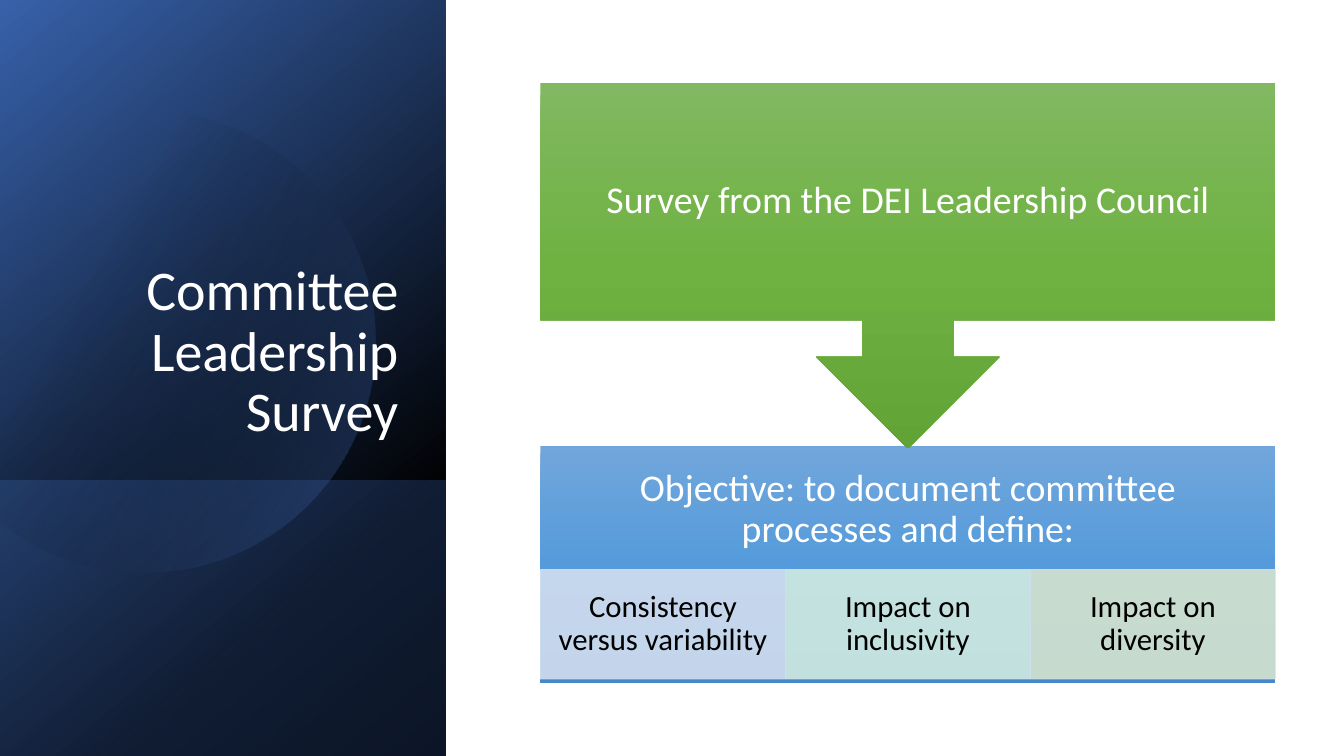
import math

from lxml import etree
from pptx import Presentation
from pptx import util as u
from pptx.dml.color import RGBColor
from pptx.enum import shapes, text
from pptx.oxml import ns

COLORS = {
    "black": "000000", "white": "FFFFFF", "navy": "2F5597", "blue": "4472C4",
    "deep": "1F3864", "mist": "8FAADC", "edge": "D2DEEF",
    "green_top": "81B861", "green_mid": "6FB242", "green_end": "62A336",
    "sky_top": "71A6DB", "sky_mid": "559BDB", "sky_end": "448ACA",
    "cell_blue": "D2DEEF", "cell_teal": "D0EAE1", "cell_sage": "D5E3CF",
}
RECTANGLE = shapes.MSO_SHAPE.RECTANGLE


def rgb(name):
    """Return the palette colour of that name."""
    return RGBColor.from_string(COLORS[name])


def add_alpha(color_element, percent):
    """Set the opacity of a colour element."""
    alpha = etree.SubElement(color_element, ns.qn("a:alpha"))
    alpha.set("val", str(percent * 1000))


def fill_gradient(shape, stops, angle):
    """Fill with (position, colour, opacity) stops at a clockwise angle."""
    shape.shadow.inherit = False
    shape.line.fill.background()
    shape.fill.gradient()
    shape.fill.gradient_angle = (360 - angle) % 360
    stop_list = shape._element.spPr.find(".//" + ns.qn("a:gsLst"))
    for old_stop in list(stop_list):
        stop_list.remove(old_stop)
    for position, name, opacity in stops:
        stop = etree.SubElement(stop_list, ns.qn("a:gs"), pos=str(position * 1000))
        color = etree.SubElement(stop, ns.qn("a:srgbClr"), val=COLORS[name])
        if opacity < 100:
            add_alpha(color, opacity)


def add_box(slide, kind, left, top, width, height):
    """Add a preset shape placed in centimetres."""
    return slide.shapes.add_shape(kind, u.Cm(left), u.Cm(top), u.Cm(width), u.Cm(height))


def add_text_box(slide, left, top, width, height):
    """Add a text box placed in centimetres."""
    return slide.shapes.add_textbox(u.Cm(left), u.Cm(top), u.Cm(width), u.Cm(height))


def write(shape, words, size, color="white", align=text.PP_ALIGN.CENTER,
          anchor=text.MSO_ANCHOR.MIDDLE, inset_x=0.53, inset_y=0.53):
    """Write one formatted paragraph into a shape."""
    frame = shape.text_frame
    frame.word_wrap = True
    frame.vertical_anchor = anchor
    frame.margin_left = frame.margin_right = u.Cm(inset_x)
    frame.margin_top = frame.margin_bottom = u.Cm(inset_y)
    paragraph = frame.paragraphs[0]
    paragraph.alignment = align
    paragraph.line_spacing = 0.9
    run = paragraph.add_run()
    run.text = words
    run.font.name = "Calibri"
    run.font.size = u.Pt(size)
    run.font.color.rgb = rgb(color)


def add_disc(slide, center_x, center_y, radius, left_edge):
    """Draw a translucent disc cut off at the left edge of the panel."""
    limit = math.degrees(math.acos((left_edge - center_x) / radius))
    steps = 90
    points = []
    for step in range(steps + 1):
        angle = math.radians(limit * (2 * step / steps - 1))
        points.append((u.Cm(center_x + radius * math.cos(angle)),
                       u.Cm(center_y + radius * math.sin(angle))))
    builder = slide.shapes.build_freeform(*points[0])
    builder.add_line_segments(points[1:], close=True)
    fill_gradient(builder.convert_to_shape(),
                  [(29, "black", 0), (100, "blue", 43)], 30)


def add_title_panel(slide, left, top, width, height):
    """Build the dark panel with the slide title."""
    band_top = 12.1
    layers = [
        (0, [(0, "navy", 100), (75, "black", 100), (100, "black", 100)], 50),
        (0, [(0, "blue", 46), (100, "black", 0)], 50),
        (band_top, [(0, "blue", 29), (100, "deep", 40)], 50),
    ]
    for offset, stops, angle in layers:
        layer = add_box(slide, RECTANGLE, left, top + offset, width, height - offset)
        fill_gradient(layer, stops, angle)
    add_disc(slide, left + 3.65, top + 8.6, 5.82, left)
    title = add_text_box(slide, left + 1.63, top + 4.67, 8.66, 6.65)
    write(title, "Committee Leadership Survey", 40, align=text.PP_ALIGN.RIGHT,
          anchor=text.MSO_ANCHOR.BOTTOM, inset_x=0.25, inset_y=0.13)


def add_objective(slide, left, top, width, height):
    """Build the objective block with its row of topics."""
    block = add_box(slide, RECTANGLE, left, top, width, height)
    fill_gradient(block, [(0, "sky_top", 100), (50, "sky_mid", 100),
                          (100, "sky_end", 100)], 90)
    heading = add_text_box(slide, left, top, width, 3.24)
    write(heading, "Objective: to document committee processes and define:", 27)
    topics = [("Consistency versus variability", "cell_blue"),
              ("Impact on inclusivity", "cell_teal"),
              ("Impact on diversity", "cell_sage")]
    cell_width = width / len(topics)
    for index, (words, color) in enumerate(topics):
        cell = add_box(slide, RECTANGLE, left + index * cell_width, top + 3.12,
                       cell_width, 2.76)
        cell.shadow.inherit = False
        cell.fill.solid()
        cell.fill.fore_color.rgb = rgb(color)
        cell.line.color.rgb = rgb("edge")
        cell.line.width = u.Pt(0.5)
        for color_element in cell._element.spPr.iter(ns.qn("a:srgbClr")):
            add_alpha(color_element, 90)
        write(cell, words, 22, color="black", inset_x=0.43, inset_y=0.08)


def add_survey_callout(slide, left, top, width, height):
    """Build the survey box whose arrow points down to the objective."""
    callout = add_box(slide, shapes.MSO_SHAPE.DOWN_ARROW_CALLOUT, left, top, width, height)
    fill_gradient(callout, [(0, "green_top", 100), (50, "green_mid", 100),
                            (100, "green_end", 100)], 90)
    write(callout, "Survey from the DEI Leadership Council", 27)


def main():
    """Build and save the slide."""
    presentation = Presentation()
    presentation.slide_width = u.Cm(33.87)
    presentation.slide_height = u.Cm(19.05)
    slide = presentation.slides.add_slide(presentation.slide_layouts[6])
    add_title_panel(slide, 0, 0, 11.22, 19.05)
    add_objective(slide, 13.62, 11.23, 18.52, 5.99)
    add_survey_callout(slide, 13.62, 2.08, 18.52, 9.22)
    presentation.save("out.pptx")


if __name__ == "__main__":
    main()
